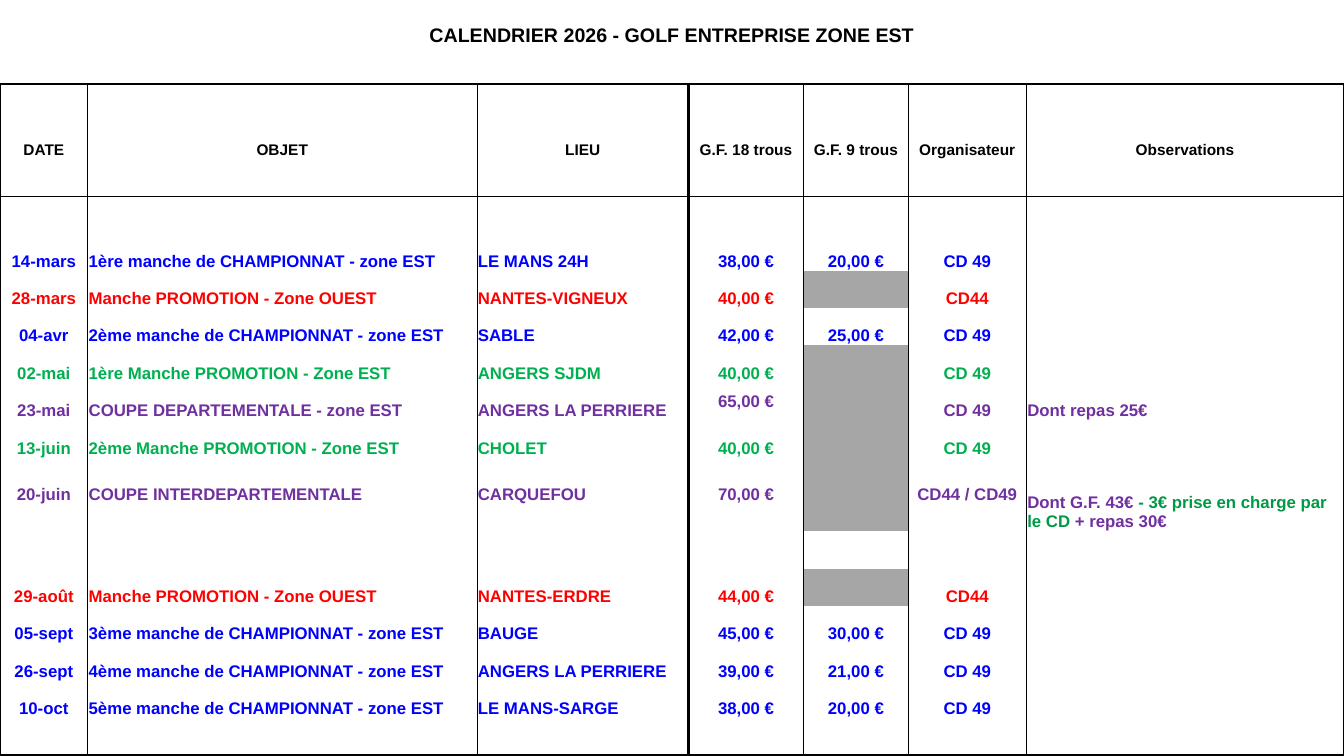
from lxml.etree import SubElement
from pptx import Presentation
from pptx.dml.color import RGBColor
from pptx.enum.text import MSO_ANCHOR, PP_ALIGN
from pptx.oxml.ns import qn
from pptx.util import Inches, Pt

COLORS = {
    "black": "000000", "blue": "0000FF", "red": "FF0000", "green": "00B050",
    "purple": "7030A0", "dark green": "009A46", "gray": "A6A6A6",
}
NO_STYLE = "{2D5ABB26-0587-4C30-8999-92F81FD0307C}"
THICK, THIN = 2, 0.5

COLUMN_WIDTHS = [0.87, 3.86, 2.1, 1.14, 1.04, 1.17, 3.15]
TITLE_ROW, HEADER_ROW, FIRST_EVENT_ROW, TALL_ROW, LAST_ROW = 0, 3, 6, 12, 18
TITLE_HEIGHT, TALL_HEIGHT = 0.46, 0.73
ROW_HEIGHT = (7.5 - TITLE_HEIGHT - TALL_HEIGHT) / 17
LEFT_COLUMNS = (1, 2, 6)
NINE_HOLES_COLUMN = 4

TITLE = "CALENDRIER 2026 - GOLF ENTREPRISE ZONE EST"
HEADERS = ["DATE", "OBJET", "LIEU", "G.F. 18 trous", "G.F. 9 trous",
           "Organisateur", "Observations"]

# One entry per row: colour, then the cells; None as 9-hole fee means a gray cell
EVENTS = [
    ("blue", "14-mars", "1ère manche de CHAMPIONNAT - zone EST", "LE MANS 24H",
     "38,00 €", "20,00 €", "CD 49", ""),
    ("red", "28-mars", "Manche PROMOTION - Zone OUEST", "NANTES-VIGNEUX",
     "40,00 €", None, "CD44", ""),
    ("blue", "04-avr", "2ème manche de CHAMPIONNAT - zone EST", "SABLE",
     "42,00 €", "25,00 €", "CD 49", ""),
    ("green", "02-mai", "1ère Manche PROMOTION - Zone EST", "ANGERS SJDM",
     "40,00 €", None, "CD 49", ""),
    ("purple", "23-mai", "COUPE DEPARTEMENTALE - zone EST", "ANGERS LA PERRIERE",
     "65,00 €", None, "CD 49", "Dont repas 25€"),
    ("green", "13-juin", "2ème Manche PROMOTION - Zone EST", "CHOLET",
     "40,00 €", None, "CD 49", ""),
    ("purple", "20-juin", "COUPE INTERDEPARTEMENTALE", "CARQUEFOU",
     "70,00 €", None, "CD44 / CD49",
     [("Dont G.F. 43€ ", "purple"),
      ("- 3€ prise en charge par le CD", "dark green"),
      (" + repas 30€", "purple")]),
    ("black", "", "", "", "", "", "", ""),
    ("red", "29-août", "Manche PROMOTION - Zone OUEST", "NANTES-ERDRE",
     "44,00 €", None, "CD44", ""),
    ("blue", "05-sept", "3ème manche de CHAMPIONNAT - zone EST", "BAUGE",
     "45,00 €", "30,00 €", "CD 49", ""),
    ("blue", "26-sept", "4ème manche de CHAMPIONNAT - zone EST",
     "ANGERS LA PERRIERE", "39,00 €", "21,00 €", "CD 49", ""),
    ("blue", "10-oct", "5ème manche de CHAMPIONNAT - zone EST", "LE MANS-SARGE",
     "38,00 €", "20,00 €", "CD 49", ""),
]


def write_text(cell, text, size=12, color="black", align=PP_ALIGN.CENTER,
               anchor=MSO_ANCHOR.BOTTOM):
    """Write a string, or a list of (text, colour) parts, into a cell."""
    cell.vertical_anchor = anchor
    paragraph = cell.text_frame.paragraphs[0]
    paragraph.alignment = align
    parts = [(text, color)] if isinstance(text, str) else text
    for part, part_color in parts:
        run = paragraph.add_run()
        run.text = part
        run.font.name = "Arial"
        run.font.size = Pt(size)
        run.font.bold = True
        run.font.color.rgb = RGBColor.from_string(COLORS[part_color])


def set_borders(cell, **widths):
    """Draw the given sides (L, R, T, B) in black and leave the others out."""
    properties = cell._tc.get_or_add_tcPr()
    for side in "LRTB":
        width = widths.get(side)
        line = SubElement(properties, qn(f"a:ln{side}"), w=str(Pt(width or 0)))
        if width:
            fill = SubElement(line, qn("a:solidFill"))
            SubElement(fill, qn("a:srgbClr"), val=COLORS["black"])
        else:
            SubElement(line, qn("a:noFill"))


presentation = Presentation()
presentation.slide_width = Inches(13.33)
presentation.slide_height = Inches(7.5)
slide = presentation.slides.add_slide(presentation.slide_layouts[6])

# Table grid
table_frame = slide.shapes.add_table(
    LAST_ROW + 1, len(COLUMN_WIDTHS), 0, 0, Inches(13.33), Inches(7.5))
table = table_frame.table
table.first_row = False
table.horz_banding = False
table._tbl.tblPr.find(qn("a:tableStyleId")).text = NO_STYLE
for column, width in zip(table.columns, COLUMN_WIDTHS):
    column.width = Inches(width)
special_heights = {TITLE_ROW: TITLE_HEIGHT, TALL_ROW: TALL_HEIGHT}
for index, row in enumerate(table.rows):
    row.height = Inches(special_heights.get(index, ROW_HEIGHT))

# Borders, margins and empty fills
vertical_lines = [THICK, THIN, THIN, THICK, THIN, THIN, THIN, THICK]
horizontal_lines = {2: THICK, 5: THIN, LAST_ROW + 1: THICK}
for row_index, row in enumerate(table.rows):
    for column_index, cell in enumerate(row.cells):
        borders = {"T": horizontal_lines.get(row_index),
                   "B": horizontal_lines.get(row_index + 1)}
        if row_index >= 2:
            borders["L"] = vertical_lines[column_index]
            borders["R"] = vertical_lines[column_index + 1]
        set_borders(cell, **borders)
        cell.fill.background()
        cell.margin_left = cell.margin_right = cell.margin_top = Inches(0.01)
        cell.margin_bottom = 0

# Title and column headers
table.cell(TITLE_ROW, 0).merge(table.cell(TITLE_ROW, len(COLUMN_WIDTHS) - 1))
write_text(table.cell(TITLE_ROW, 0), TITLE, size=14)
for column_index, header in enumerate(HEADERS):
    write_text(table.cell(HEADER_ROW, column_index), header, size=11)

# Events
for row_index, (color, *values) in enumerate(EVENTS, FIRST_EVENT_ROW):
    for column_index, value in enumerate(values):
        cell = table.cell(row_index, column_index)
        if value is None:
            cell.fill.solid()
            cell.fill.fore_color.rgb = RGBColor.from_string(COLORS["gray"])
        elif value:
            centred_tall = row_index == TALL_ROW and column_index < 6
            middle = centred_tall or value == "65,00 €"
            write_text(
                cell, value, color=color,
                align=PP_ALIGN.LEFT if column_index in LEFT_COLUMNS else PP_ALIGN.CENTER,
                anchor=MSO_ANCHOR.MIDDLE if middle else MSO_ANCHOR.BOTTOM)

presentation.save("out.pptx")
